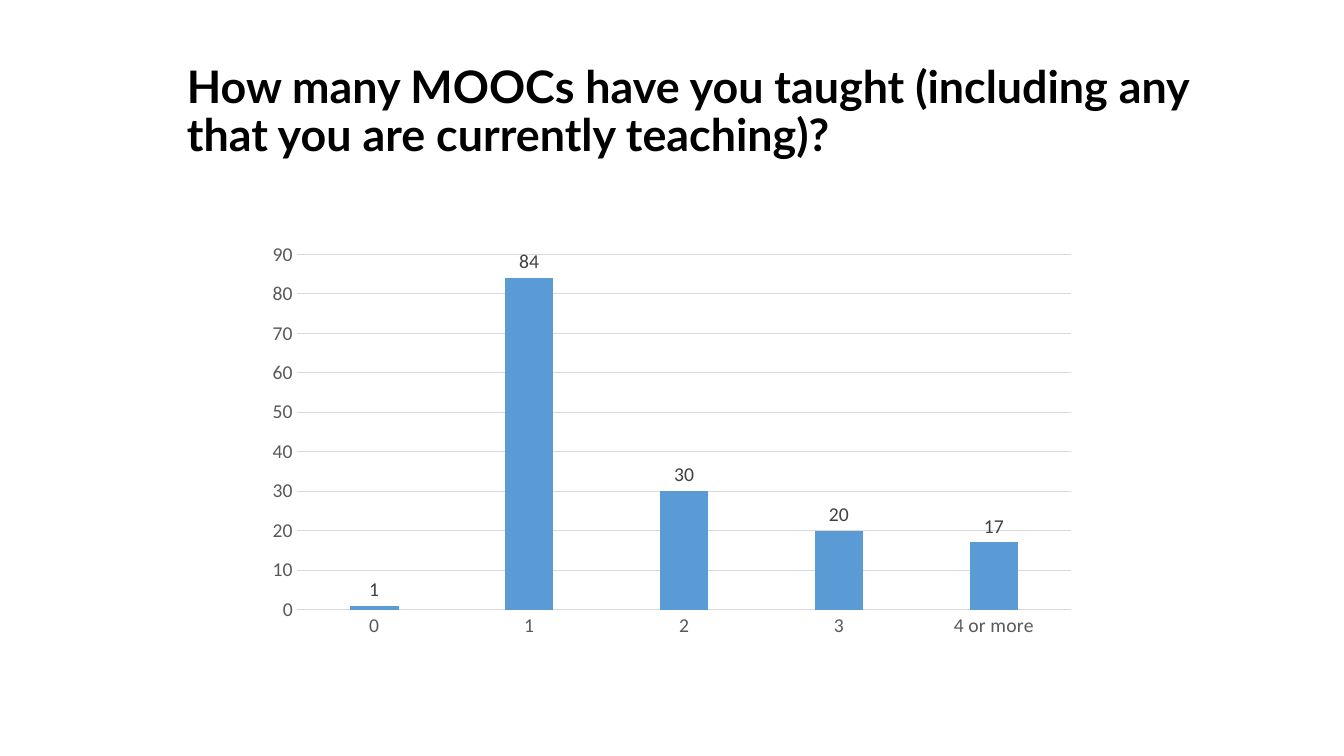
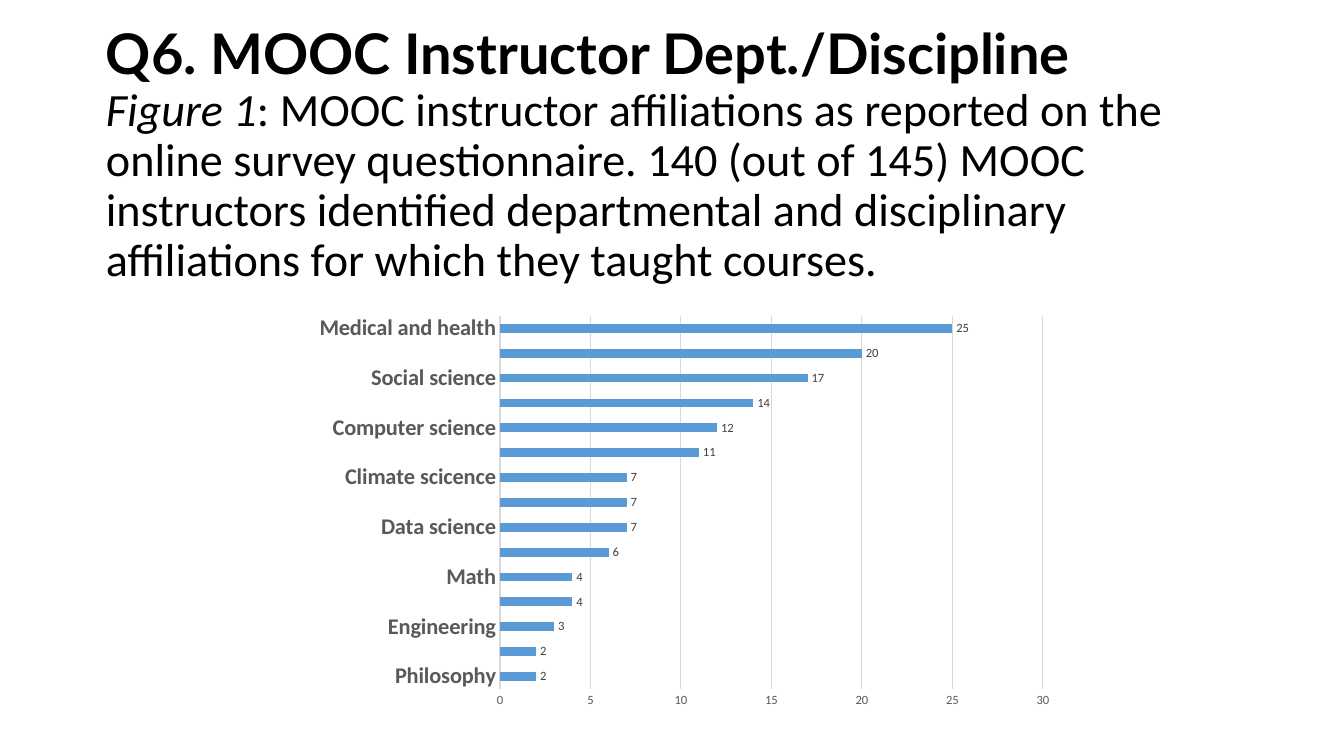
from lxml import etree
from pptx import Presentation
from pptx.chart.data import CategoryChartData
from pptx.dml.color import RGBColor
from pptx.enum.chart import XL_CHART_TYPE, XL_LABEL_POSITION, XL_TICK_MARK
from pptx.enum.text import MSO_ANCHOR
from pptx.oxml.ns import qn
from pptx.util import Pt

PX = 12192000 / 1344
WIDE, HIGH = 1344, 756
COLUMN = XL_CHART_TYPE.COLUMN_CLUSTERED
BAR = XL_CHART_TYPE.BAR_CLUSTERED
OUTSIDE = XL_LABEL_POSITION.OUTSIDE_END
NO_TICK = XL_TICK_MARK.NONE
MIDDLE = MSO_ANCHOR.MIDDLE

BLACK = RGBColor(0x00, 0x00, 0x00)
BLUE = RGBColor(0x5B, 0x9B, 0xD5)
GRID = RGBColor(0xD9, 0xD9, 0xD9)
GREY = RGBColor(0x59, 0x59, 0x59)
DARK = RGBColor(0x40, 0x40, 0x40)
HEAD, BODY = "Lato", "Calibri"

COUNTS = [("0", 1), ("1", 84), ("2", 30), ("3", 20), ("4 or more", 17)]
FIELDS = [
    ("Philosophy", 2), ("", 2), ("Engineering", 3), ("", 4), ("Math", 4),
    ("", 6), ("Data science", 7), ("", 7), ("Climate scicence", 7),
    ("", 11), ("Computer science", 12), ("", 14), ("Social science", 17),
    ("", 20), ("Medical and health", 25),
]


def emu(box):
    return [round(n * PX) for n in box]


def style(font, size, color=BLACK, name=BODY, bold=False, italic=False):
    font.size, font.name = Pt(size), name
    font.bold, font.italic = bold, italic
    font.color.rgb = color


def write(para, text, **form):
    style(para.add_run().font, **form)
    para.runs[-1].text = text


def title(slide, box):
    """Add the title box and return its paragraph."""
    frame = slide.shapes.add_textbox(*emu(box)).text_frame
    frame.word_wrap = True
    frame.vertical_anchor = MIDDLE
    para = frame.paragraphs[0]
    para.line_spacing = 0.9
    return para


def rule(line):
    line.color.rgb = GRID
    line.width = Pt(0.75)


def axes(chart, size, bold, small, top, step):
    names, scale = chart.category_axis, chart.value_axis
    for axis in (names, scale):
        axis.major_tick_mark = axis.minor_tick_mark = NO_TICK
    names.has_major_gridlines = False
    style(names.tick_labels.font, size, GREY, bold=bold)
    rule(names.format.line)
    style(scale.tick_labels.font, small, GREY)
    scale.format.line.fill.background()
    scale.has_major_gridlines = True
    rule(scale.major_gridlines.format.line)
    scale.minimum_scale, scale.maximum_scale = 0, top
    scale.major_unit = step


def place(chart, box, area):
    """Fix the inner plot area, in px from the corner of the chart's box."""
    plot = chart.plots[0]._element.getparent()
    for old in plot.findall(qn("c:layout")):
        plot.remove(old)
    layout = etree.Element(qn("c:layout"))
    manual = etree.SubElement(layout, qn("c:manualLayout"))
    parts = [n / size for n, size in zip(area, box[2:] * 2)]
    tags = ("layoutTarget", "xMode", "yMode", "x", "y", "w", "h")
    for tag, val in zip(tags, ("inner", "edge", "edge", *parts)):
        etree.SubElement(manual, qn("c:" + tag)).set("val", str(val))
    plot.insert(0, layout)


def graph(slide, box, kind, pairs, gap, top, step, size, small,
          bold=False, overlap=0):
    data = CategoryChartData()
    data.categories, values = zip(*pairs)
    data.add_series("Series 1", values)
    chart = slide.shapes.add_chart(kind, *emu(box), data).chart
    chart.has_title = chart.has_legend = False
    style(chart.font, small)
    axes(chart, size, bold, small, top, step)
    plot = chart.plots[0]
    plot.vary_by_categories = False
    plot.gap_width, plot.overlap = gap, overlap
    fill = plot.series[0].format.fill
    fill.solid()
    fill.fore_color.rgb = BLUE
    plot.has_data_labels = True
    labels = plot.data_labels
    labels.show_value = True
    labels.position = OUTSIDE
    style(labels.font, small, DARK)
    return chart


def taught(slide):
    graph(slide, (256, 234, 832, 412), COLUMN, COUNTS, gap=219,
          top=90, step=10, size=14, small=14, overlap=-27)
    para = title(slide, (177, 40, 1075, 146))
    write(para, "How many MOOCs have you taught (including any that you "
          "are currently teaching)?", size=32, name=HEAD, bold=True)


def fields(slide):
    box = (288, 294, 774, 421)
    chart = graph(slide, box, BAR, FIELDS, gap=182,
                  top=30, step=5, size=16, small=9, bold=True)
    place(chart, box, (212, 22, 543, 373))
    para = title(slide, (96, 20, 1159, 273))
    write(para, "Q6. MOOC Instructor Dept./Discipline", size=40, name=HEAD,
          bold=True)
    para.add_line_break()
    write(para, "Figure 1", size=33, italic=True)
    write(para, ": MOOC instructor affiliations as reported on the online "
          "survey questionnaire. 140 (out of 145) MOOC instructors "
          "identified departmental and disciplinary affiliations for which "
          "they taught courses.", size=33)


def main():
    deck = Presentation()
    deck.slide_width, deck.slide_height = emu((WIDE, HIGH))
    for build in (taught, fields):
        build(deck.slides.add_slide(deck.slide_layouts[6]))
    deck.save("out.pptx")


if __name__ == "__main__":
    main()
